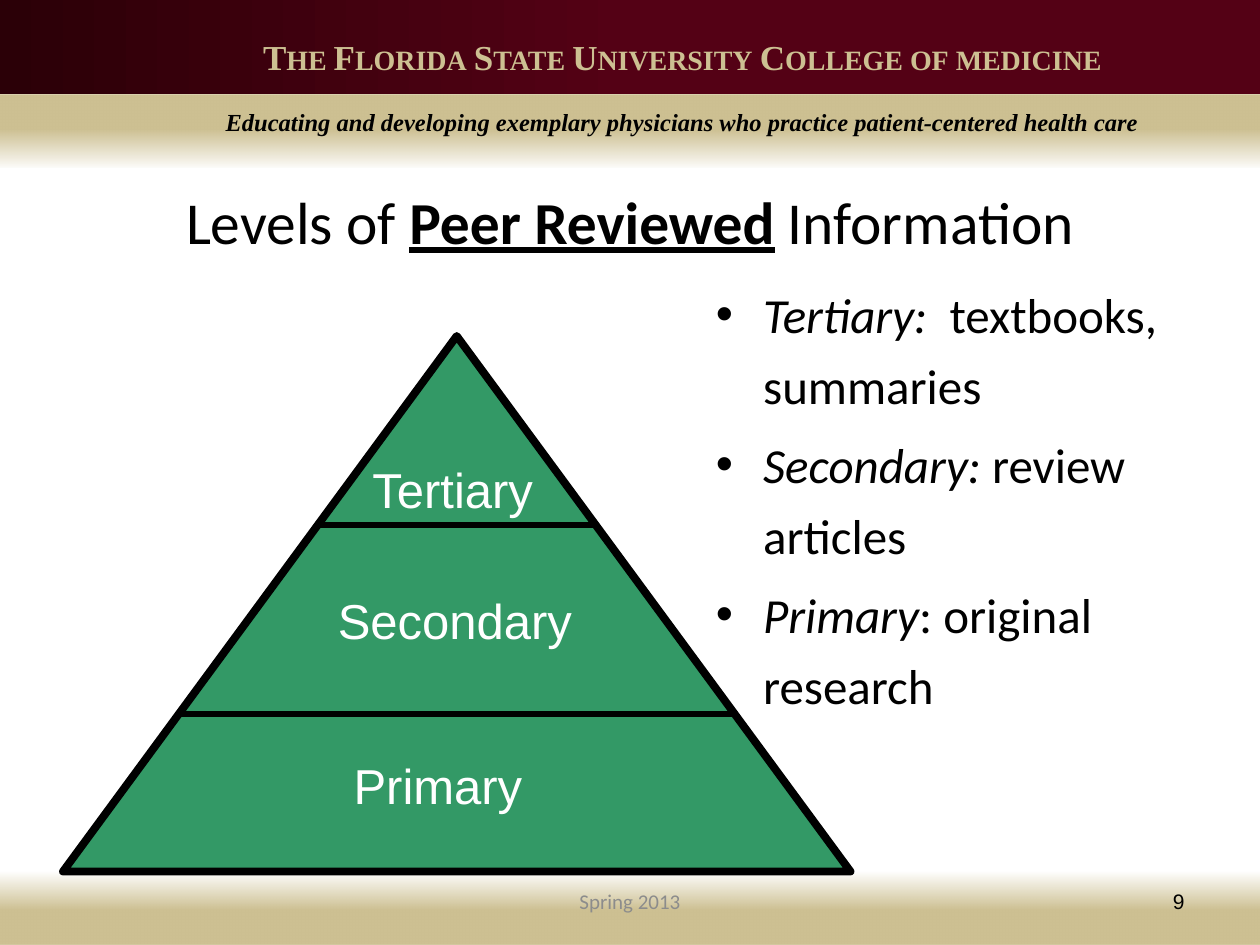
from dataclasses import dataclass

from lxml import etree
from pptx import Presentation
from pptx.dml.color import RGBColor
from pptx.enum.shapes import MSO_CONNECTOR, MSO_SHAPE
from pptx.enum.text import MSO_ANCHOR, PP_ALIGN
from pptx.oxml import parse_xml
from pptx.oxml.ns import nsdecls, qn
from pptx.util import Inches, Pt

RECTANGLE, TRIANGLE = MSO_SHAPE.RECTANGLE, MSO_SHAPE.ISOSCELES_TRIANGLE
STRAIGHT = MSO_CONNECTOR.STRAIGHT
LEFT, CENTER, RIGHT = PP_ALIGN.LEFT, PP_ALIGN.CENTER, PP_ALIGN.RIGHT
TOP, MIDDLE = MSO_ANCHOR.TOP, MSO_ANCHOR.MIDDLE
COLUMNS, ROWS = 120, 90


@dataclass(frozen=True)
class Theme:
    """Colours, fonts and type sizes of the slide."""
    gold: str = "CDC092"
    garnet: str = "540115"
    dark_garnet: str = "2B0007"
    green: str = "339966"
    black: str = "000000"
    white: str = "FFFFFF"
    grey: str = "8C8C8C"
    body_font: str = "Calibri"
    label_font: str = "Arial"
    banner_font: str = "Times New Roman"
    title_size: int = 34
    body_size: int = 28
    banner_size: int = 20
    motto_size: int = 14
    footer_size: int = 12


def write(paragraph, text, *, font, size, color, bold=False, italic=False,
          underline=False, small_caps=False):
    """Add one formatted run to a paragraph."""
    run = paragraph.add_run()
    run.text = text
    style = run.font
    style.name, style.size = font, Pt(size)
    style.bold, style.italic, style.underline = bold, italic, underline
    style.color.rgb = RGBColor.from_string(color)
    if small_caps:
        run._r.get_or_add_rPr().set("cap", "small")


class SlideBuilder:
    """Place styled elements on a slide by grid columns and rows."""

    def __init__(self, presentation, theme):
        self.theme = theme
        self.column = presentation.slide_width / COLUMNS
        self.row = presentation.slide_height / ROWS
        self.slide = presentation.slides.add_slide(presentation.slide_layouts[6])

    def place(self, left, top, width, height):
        """Turn grid cells into slide lengths."""
        return (round(left * self.column), round(top * self.row),
                round(width * self.column), round(height * self.row))

    def shape(self, kind, box):
        """Add a preset shape without shadow or outline."""
        shape = self.slide.shapes.add_shape(kind, *self.place(*box))
        shape.shadow.inherit = False
        shape.line.fill.background()
        return shape

    def band(self, box, stops, angle):
        """Add a gradient band from (position, colour, opacity) stops."""
        band = self.shape(RECTANGLE, box)
        marks = "".join(
            f'<a:gs pos="{position * 1000}"><a:srgbClr val="{color}">'
            f'<a:alpha val="{opacity * 1000}"/></a:srgbClr></a:gs>'
            for position, color, opacity in stops)
        gradient = parse_xml(
            f'<a:gradFill {nsdecls("a")} rotWithShape="1"><a:gsLst>{marks}</a:gsLst>'
            f'<a:lin ang="{angle * 60000}" scaled="0"/></a:gradFill>')
        band._element.spPr.find(qn("a:prstGeom")).addnext(gradient)

    def triangle(self, box, width):
        """Add the outlined pyramid."""
        pyramid = self.shape(TRIANGLE, box)
        pyramid.fill.solid()
        pyramid.fill.fore_color.rgb = RGBColor.from_string(self.theme.green)
        pyramid.line.color.rgb = RGBColor.from_string(self.theme.black)
        pyramid.line.width = Pt(width)

    def level_line(self, left, right, row, width):
        """Add a horizontal divider."""
        x, y, length, _ = self.place(left, row, right - left, 0)
        divider = self.slide.shapes.add_connector(STRAIGHT, x, y, x + length, y)
        divider.line.color.rgb = RGBColor.from_string(self.theme.black)
        divider.line.width = Pt(width)
        etree.SubElement(divider._element.spPr, qn("a:effectLst"))

    def frame(self, box, anchor=TOP, wrap=True):
        """Add an empty text box and return its text frame."""
        frame = self.slide.shapes.add_textbox(*self.place(*box)).text_frame
        frame.word_wrap, frame.vertical_anchor = wrap, anchor
        return frame

    def text(self, box, runs, align=LEFT, anchor=TOP, wrap=True, **style):
        """Add a one-paragraph text box from (text, format) runs."""
        paragraph = self.frame(box, anchor, wrap).paragraphs[0]
        paragraph.alignment = align
        for words, extra in runs:
            write(paragraph, words, **style, **extra)

    def bullets(self, box, items, **style):
        """Add bulleted items, each an italic term and its meaning."""
        frame = self.frame(box)
        for index, (term, meaning) in enumerate(items):
            paragraph = frame.add_paragraph() if index else frame.paragraphs[0]
            properties = paragraph._p.get_or_add_pPr()
            indent = Inches(0.375)
            properties.set("marL", str(indent))
            properties.set("indent", str(-indent))
            etree.SubElement(properties, qn("a:buFont"), typeface="Arial")
            etree.SubElement(properties, qn("a:buChar"), char="•")
            paragraph.line_spacing = 1.2
            if index:
                paragraph.space_before = Pt(5)
            write(paragraph, term, italic=True, **style)
            write(paragraph, meaning, **style)


def main():
    """Build and save the slide."""
    presentation = Presentation()
    presentation.slide_width, presentation.slide_height = Inches(10), Inches(7.5)
    theme = Theme()
    page = SlideBuilder(presentation, theme)

    page.band((0, 9, COLUMNS, 7),
              [(0, theme.gold, 100), (47, theme.gold, 100), (100, theme.gold, 5)], 90)
    page.band((0, 0, COLUMNS, 9),
              [(0, theme.garnet, 100), (50, theme.garnet, 100),
               (100, theme.dark_garnet, 100)], 180)
    page.band((0, 83, COLUMNS, 7),
              [(0, theme.gold, 100), (47, theme.gold, 100), (100, theme.gold, 0)], 270)

    page.text((5, 2.75, COLUMNS, 5.25),
              [("The Florida State University College of medicine",
                {"bold": True, "small_caps": True})], align=CENTER,
              font=theme.banner_font, size=theme.banner_size, color=theme.gold)
    page.text((5, 9.6, COLUMNS, 4),
              [("Educating and developing exemplary physicians who practice "
                "patient-centered health care", {"bold": True, "italic": True})],
              align=CENTER, anchor=MIDDLE,
              font=theme.banner_font, size=theme.motto_size, color=theme.black)

    page.text((6, 17, 108, 8),
              [("Levels of ", {}), ("Peer Reviewed", {"bold": True, "underline": True}),
               (" Information", {})], align=CENTER, anchor=MIDDLE,
              font=theme.body_font, size=theme.title_size, color=theme.black)
    page.bullets((67, 25.4, 53, 55),
                 [("Tertiary:", "  textbooks, summaries"),
                  ("Secondary: ", "review articles"),
                  ("Primary", ": original research")],
                 font=theme.body_font, size=theme.body_size, color=theme.black)

    page.text((41, 83.4, 38, 4.8), [("Spring 2013", {})], align=CENTER, anchor=MIDDLE,
              font=theme.body_font, size=theme.footer_size, color=theme.grey)
    page.text((86, 83.4, 28, 4.8), [("9", {})], align=RIGHT, anchor=MIDDLE,
              font=theme.label_font, size=theme.footer_size, color=theme.black)

    left, apex, base, height = 6, 32, 75, 51
    page.triangle((left, apex, base, height), 4.5)
    center = left + base / 2
    for row in (50, 68):
        reach = base / 2 * (row - apex) / height
        page.level_line(center - reach, center + reach, row, 3)

    for level, column, row, width in (("Primary", 32.5, 71.4, 18.5),
                                      ("Secondary", 31, 55.6, 24.7),
                                      ("Tertiary", 34.3, 43.2, 18.2)):
        page.text((column, row, width, 6.8), [(level, {})], wrap=False,
                  font=theme.label_font, size=theme.body_size, color=theme.white)

    presentation.save("out.pptx")


if __name__ == "__main__":
    main()
